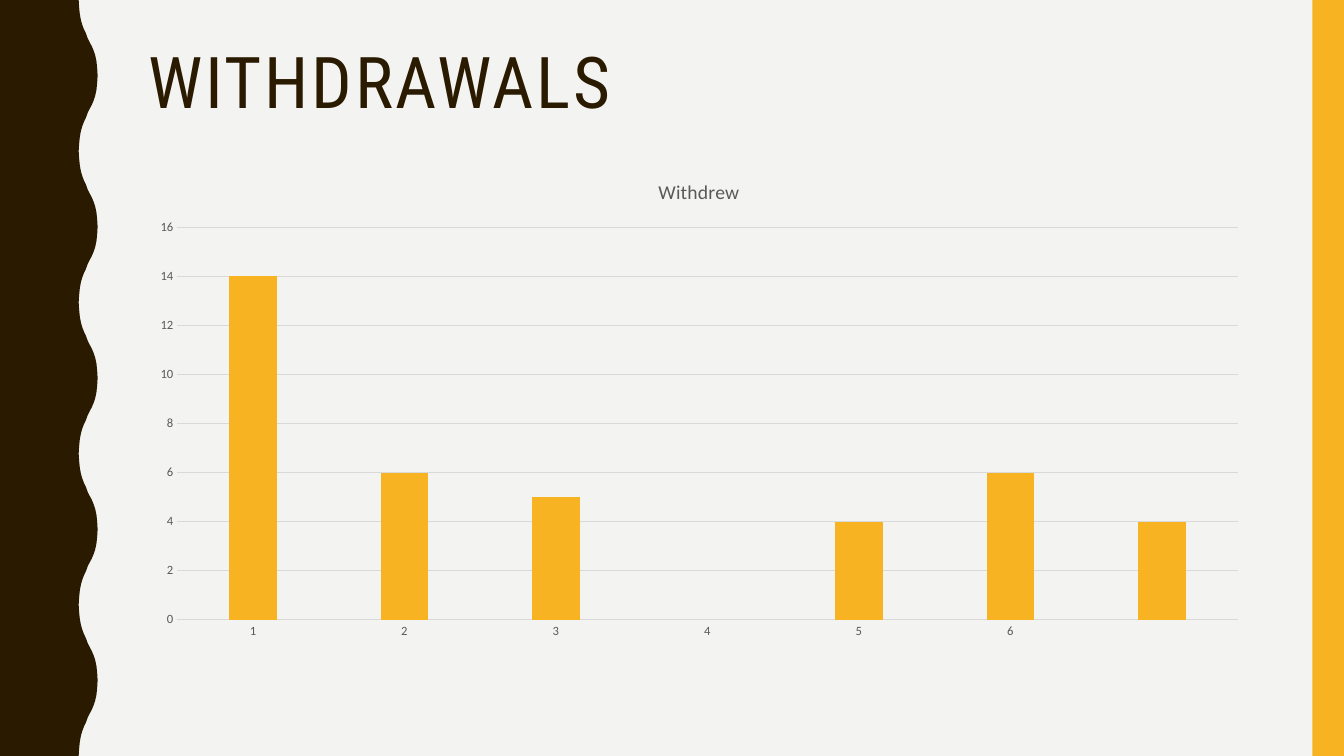
from dataclasses import dataclass

from pptx import Presentation
from pptx.chart.data import CategoryChartData
from pptx.dml.color import RGBColor
from pptx.enum.chart import XL_CHART_TYPE as ChartType, XL_TICK_MARK as TickMark
from pptx.enum.shapes import MSO_SHAPE as ShapeType
from pptx.enum.text import MSO_ANCHOR as Anchor, MSO_AUTO_SIZE as AutoSize, PP_ALIGN as Align
from pptx.util import Inches, Pt

COLUMNS, ROWS = 128, 72
TITLE_ONLY = 5

# Half a wave, trough to crest: (share of amplitude, share of half period)
HALF_WAVE = [
    (0, 0), (0.02, 0.09), (0.06, 0.19), (0.12, 0.27), (0.19, 0.33),
    (0.28, 0.39), (0.38, 0.44), (0.48, 0.51), (0.58, 0.56), (0.69, 0.61),
    (0.79, 0.67), (0.87, 0.73), (0.94, 0.81), (0.98, 0.91), (1, 1),
]


@dataclass(frozen=True)
class Theme:
    background: RGBColor = RGBColor.from_string("F3F3F2")
    dark: RGBColor = RGBColor.from_string("2A1A00")
    accent: RGBColor = RGBColor.from_string("F8B323")
    label: RGBColor = RGBColor.from_string("595959")
    rule: RGBColor = RGBColor.from_string("D9D9D9")
    heading_font: str = "Roboto Condensed"
    body_font: str = "Calibri"
    heading_size: Pt = Pt(51)
    chart_title_size: Pt = Pt(14)
    chart_size: Pt = Pt(10)
    axis_size: Pt = Pt(9)
    rule_width: Pt = Pt(0.75)


class SlideBuilder:
    """Places elements on a grid of COLUMNS by ROWS, in the theme's style."""

    def __init__(self, presentation, theme):
        self.theme = theme
        self.column = presentation.slide_width / COLUMNS
        self.row = presentation.slide_height / ROWS
        self.slide = presentation.slides.add_slide(presentation.slide_layouts[TITLE_ONLY])
        fill = self.slide.background.fill
        fill.solid()
        fill.fore_color.rgb = theme.background

    def area(self, left, top, width, height):
        return (round(left * self.column), round(top * self.row),
                round(width * self.column), round(height * self.row))

    def paint(self, shape, color):
        shape.shadow.inherit = False
        shape.fill.solid()
        shape.fill.fore_color.rgb = color
        shape.line.fill.background()

    def style_font(self, font, size, color, name):
        font.size, font.name, font.bold = size, name, False
        font.color.rgb = color

    def wavy_band(self, trough, crest, waves):
        """Fill the left edge up to a wave that runs down the whole slide."""
        half = ROWS / waves / 2
        falling = [(depth, 2 - phase) for depth, phase in reversed(HALF_WAVE[:-1])]
        edge = [(trough + (crest - trough) * depth, (2 * wave + phase) * half)
                for wave in range(waves) for depth, phase in HALF_WAVE + falling]
        points = [(x * self.column, y * self.row) for x, y in edge + [(0, ROWS)]]
        builder = self.slide.shapes.build_freeform(0, 0)
        builder.add_line_segments(points, close=True)
        self.paint(builder.convert_to_shape(), self.theme.dark)

    def bar(self, *cells):
        bar = self.slide.shapes.add_shape(ShapeType.RECTANGLE, *self.area(*cells))
        self.paint(bar, self.theme.accent)

    def title(self, text, *cells):
        title = self.slide.shapes.title
        title.left, title.top, title.width, title.height = self.area(*cells)
        frame = title.text_frame
        frame.text = text
        frame.word_wrap = True
        frame.auto_size = AutoSize.NONE
        frame.vertical_anchor = Anchor.TOP
        paragraph = frame.paragraphs[0]
        paragraph.alignment = Align.LEFT
        paragraph.line_spacing = 0.9
        self.style_font(paragraph.font, self.theme.heading_size,
                        self.theme.dark, self.theme.heading_font)
        paragraph.runs[0].font._element.set("spc", "200")

    def style_axis(self, axis):
        axis.major_tick_mark = axis.minor_tick_mark = TickMark.NONE
        self.style_font(axis.tick_labels.font, self.theme.axis_size,
                        self.theme.label, self.theme.body_font)

    def style_rule(self, line):
        line.color.rgb = self.theme.rule
        line.width = self.theme.rule_width

    def column_chart(self, name, categories, values, *cells):
        data = CategoryChartData()
        data.categories = categories
        data.add_series(name, values)
        chart = self.slide.shapes.add_chart(
            ChartType.COLUMN_CLUSTERED, *self.area(*cells), data).chart
        chart.font.size, chart.font.name = self.theme.chart_size, self.theme.body_font
        chart.has_legend = False
        chart.has_title = True
        chart.chart_title.include_in_layout = False
        heading = chart.chart_title.text_frame
        heading.text = name
        self.style_font(heading.paragraphs[0].font, self.theme.chart_title_size,
                        self.theme.label, self.theme.body_font)

        self.style_axis(chart.category_axis)
        self.style_rule(chart.category_axis.format.line)
        self.style_axis(chart.value_axis)
        chart.value_axis.format.line.fill.background()
        self.style_rule(chart.value_axis.major_gridlines.format.line)

        plot = chart.plots[0]
        plot.gap_width, plot.overlap = 219, -27
        plot.vary_by_categories = False
        fill = plot.series[0].format.fill
        fill.solid()
        fill.fore_color.rgb = self.theme.accent


def main():
    presentation = Presentation()
    presentation.slide_width, presentation.slide_height = Inches(13.33), Inches(7.5)
    builder = SlideBuilder(presentation, Theme())
    builder.wavy_band(trough=7.5, crest=9.3, waves=5)
    builder.bar(125, 0, 3, ROWS)
    builder.title("WITHDRAWALS", 13.15, 4, 106.85, 15.65)
    builder.column_chart("Withdrew", ["1", "2", "3", "4", "5", "6", ""],
                         [14, 6, 5, None, 4, 6, 4], 13.15, 15.17, 106.85, 46.56)
    presentation.save("out.pptx")


if __name__ == "__main__":
    main()
